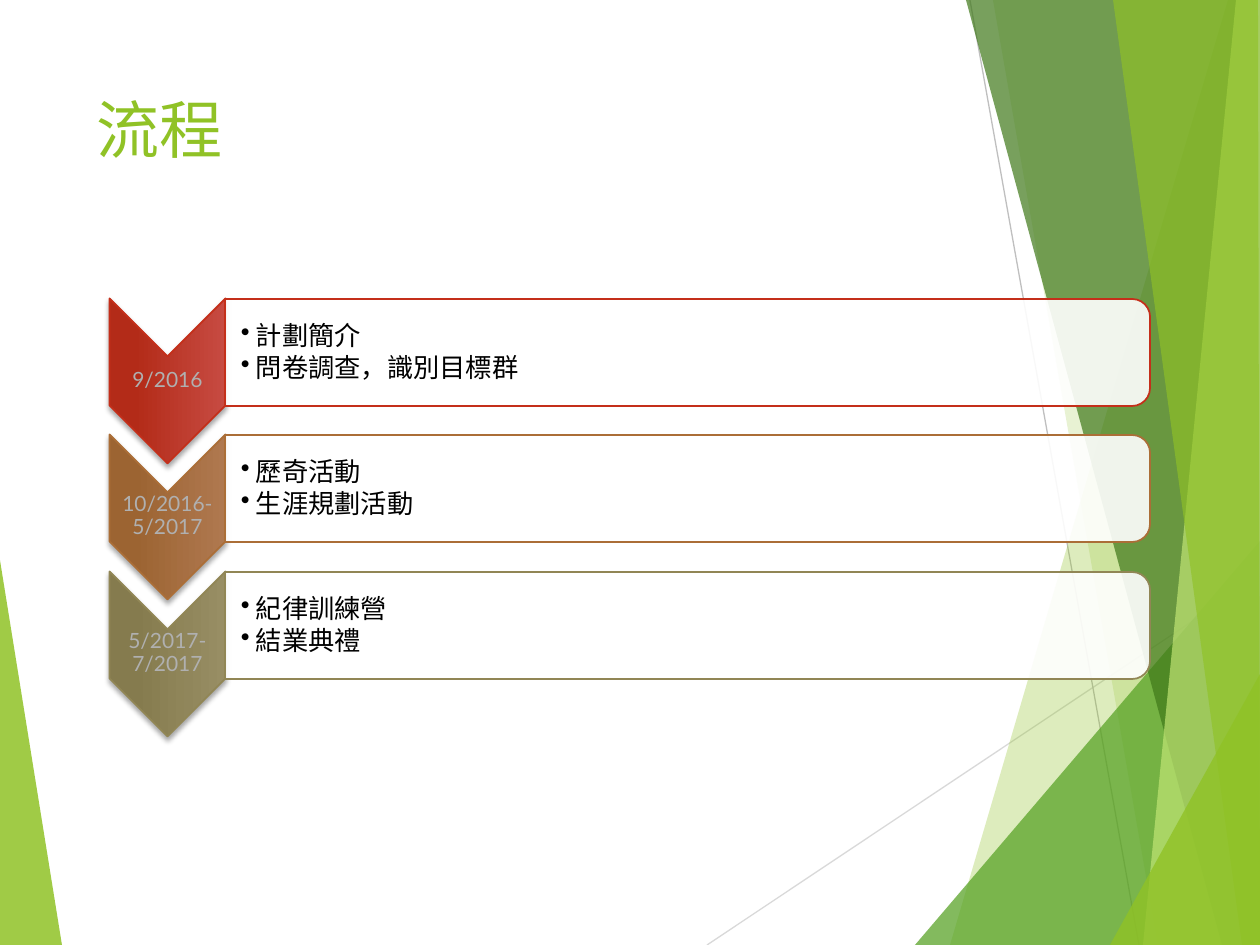
from pptx import Presentation
from pptx.dml.color import RGBColor
from pptx.enum.shapes import MSO_CONNECTOR, MSO_SHAPE
from pptx.enum.text import MSO_ANCHOR, PP_ALIGN
from pptx.oxml.ns import qn
from pptx.util import Pt
from lxml.etree import SubElement

PX = 914400 / 126  # EMU per pixel
CJK_FONT = "Noto Sans CJK TC"

presentation = Presentation()
presentation.slide_width, presentation.slide_height = round(1260 * PX), round(945 * PX)
slide = presentation.slides.add_slide(presentation.slide_layouts[6])


def set_color(color_format, hex_color, alpha=100):
    """Set a colour from a hex string, with opacity in percent."""
    color_format.rgb = RGBColor.from_string(hex_color)
    if alpha < 100:
        element = color_format._xFill.find(qn("a:srgbClr"))
        SubElement(element, qn("a:alpha"), val=str(alpha * 1000))


def add_text(box, lines, font_name, size, hex_color, frame_format, paragraph_format):
    """Add a text box with one paragraph per line."""
    frame = slide.shapes.add_textbox(*(round(length * PX) for length in box)).text_frame
    for name, value in frame_format.items():
        setattr(frame, name, value)
    frame.text = "\n".join(lines)
    for paragraph in frame.paragraphs:
        for name, value in paragraph_format.items():
            setattr(paragraph, name, value)
        font = paragraph.runs[0].font
        font.name, font.size = font_name, Pt(size)
        set_color(font.color, hex_color)
        SubElement(font._element, qn("a:ea"), typeface=font_name)
    return frame


# Background lines
for start_x, start_y, end_x, end_y, color in [
    (707, 945, 1260, 576, "D9D9D9"),
    (970, 0, 1139, 945, "BFBFBF"),
]:
    ends = [round(length * PX) for length in (start_x, start_y, end_x, end_y)]
    line = slide.shapes.add_connector(MSO_CONNECTOR.STRAIGHT, *ends)
    line.line.width = Pt(0.75)
    set_color(line.line.color, color)
    SubElement(line._element.spPr, qn("a:effectLst"))

# Background facets: colour, opacity, corners
facets = [
    ("90C226", 85, [(0, 560), (62, 945), (0, 945)]),
    ("90C226", 30, [(1228, 0), (950, 945), (1260, 945), (1260, 0)]),
    ("90C226", 20, [(993, 0), (1158, 945), (1260, 945), (1260, 0)]),
    ("54A021", 72, [(915, 945), (1260, 541), (1260, 945)]),
    ("3F7819", 70, [(966, 0), (1222, 945), (1260, 945), (1260, 0)]),
    ("C0E474", 70, [(1236, 0), (1143, 945), (1260, 945), (1260, 0)]),
    ("90C226", 65, [(1113, 0), (1242, 945), (1260, 945), (1258, 0)]),
    ("90C226", 80, [(1110, 945), (1260, 674), (1260, 945)]),
]
for color, alpha, corners in facets:
    builder = slide.shapes.build_freeform(*corners[0], scale=PX)
    builder.add_line_segments(corners[1:], close=True)
    shape = builder.convert_to_shape()
    shape.shadow.inherit = False
    shape.fill.solid()
    set_color(shape.fill.fore_color, color, alpha)
    shape.line.fill.background()

# Title
add_text((84, 84, 874, 181), ["流程"], CJK_FONT, 36, "90C226", {"word_wrap": True}, {})

# Timeline: label, gradient start, gradient end, outline, bullets
steps = [
    ("9/2016", "C74B42", "B32B18", "C42F1A", ["計劃簡介", "問卷調查，識別目標群"]),
    ("10/2016-5/2017", "AF784F", "9C6432", "AB6E37", ["歷奇活動", "生涯規劃活動"]),
    ("5/2017-7/2017", "988E64", "857B4E", "918655", ["紀律訓練營", "結業典禮"]),
]
frame_format = {
    "word_wrap": True, "vertical_anchor": MSO_ANCHOR.MIDDLE, "margin_left": PX,
    "margin_right": PX, "margin_top": PX, "margin_bottom": PX,
}
frame_format = {name: int(value) if value == PX else value for name, value in frame_format.items()}
label_format = {"alignment": PP_ALIGN.CENTER, "line_spacing": 0.9}
bullet_format = {"line_spacing": 0.9, "space_after": Pt(2), "level": 1}

for row, (label, light, dark, outline, bullets) in enumerate(steps):
    offset = row * 273 // 2

    # Both shapes are turned a quarter clockwise
    for kind, box in [
        (MSO_SHAPE.CHEVRON, (85, 323 + offset, 165, 116)),
        (MSO_SHAPE.ROUND_2_SAME_RECTANGLE, (634, offset - 110, 107, 925)),
    ]:
        shape = slide.shapes.add_shape(kind, *(round(length * PX) for length in box))
        shape.rotation = 90
        shape.shadow.inherit = False
        shape.line.width = Pt(1)
        set_color(shape.line.color, outline)
        if kind == MSO_SHAPE.CHEVRON:
            shape.fill.gradient()
            shape.fill.gradient_angle = 270
            for stop, color, position in zip(shape.fill.gradient_stops, (light, dark), (0, 0.78)):
                set_color(stop.color, color)
                stop.position = position
            effects = shape._element.spPr.find(qn("a:effectLst"))
            shadow = SubElement(effects, qn("a:outerShdw"), blurRad="38100", dist="25400",
                                dir="5400000", rotWithShape="0")
            shadow_color = SubElement(shadow, qn("a:srgbClr"), val="000000")
            SubElement(shadow_color, qn("a:alpha"), val="35000")
        else:
            shape.fill.solid()
            set_color(shape.fill.fore_color, "FFFFFF", 90)

    add_text((110, 356 + offset, 115, 49), [label], "Lato", 12, "B0B0B0",
             frame_format, label_format)
    frame = add_text((226, 305 + offset, 920, 96), bullets, CJK_FONT, 15, "000000",
                     {**frame_format, "margin_left": round(15 * PX)}, bullet_format)
    for paragraph in frame.paragraphs:
        properties = paragraph._p.get_or_add_pPr()
        properties.set("marL", str(round(15 * PX)))
        properties.set("indent", str(round(-15 * PX)))
        SubElement(properties, qn("a:buChar"), char="•")

presentation.save("out.pptx")
